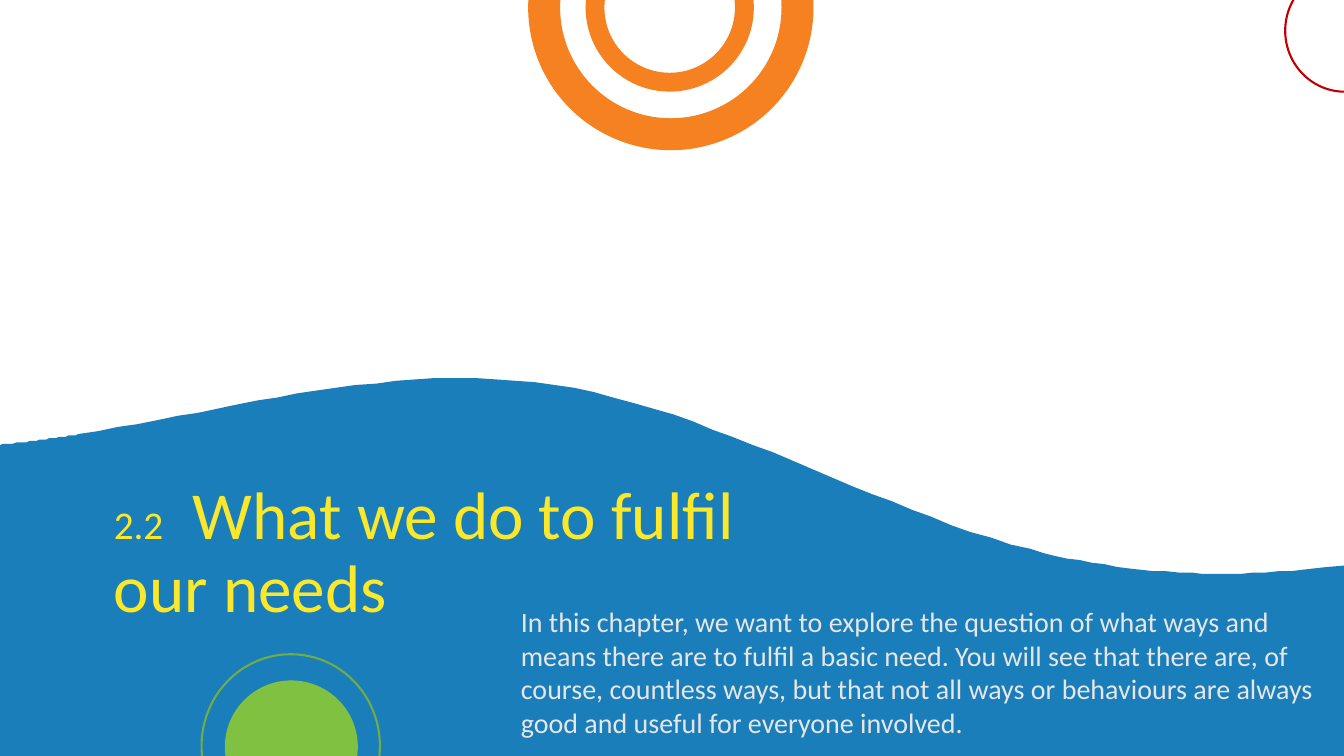
from lxml import etree
from pptx import Presentation
from pptx.dml.color import RGBColor
from pptx.enum.shapes import MSO_SHAPE
from pptx.enum.text import MSO_ANCHOR, PP_ALIGN
from pptx.oxml.ns import qn
from pptx.util import Pt

OVAL = MSO_SHAPE.OVAL
DONUT = MSO_SHAPE.DONUT
TOP = MSO_ANCHOR.TOP
LEFT = PP_ALIGN.LEFT

WIDE, HIGH = 960, 540
FONT = "Calibri"
STEPS = 24
COLORS = {
    "blue": "1A7EBA",
    "orange": "F68121",
    "lime": "80C141",
    "green": "70AD47",
    "red": "C00000",
    "yellow": "FBE82A",
    "pale": "E7E6E6",
}

CREST = (0, 317.5)
CURVES = [
    ((18.7, 315.8), (37.3, 313.2), (56, 310.3)),
    ((169.2, 292.3), (283, 257), (396, 275)),
    ((509, 292.3), (622.8, 362.9), (735.8, 392.4)),
    ((806.4, 411.1), (877, 413.3), (948.2, 405.4)),
]
SHORE = (WIDE, 403.9)

RINGS = [
    (DONUT, (377.3, -96.5, 203.8, 203.8), "orange", None),
    (DONUT, (418.3, -54.7, 120.2, 120.2), "orange", None),
    (OVAL, (160.6, 486, 95, 95), "lime", None),
    (OVAL, (144, 467.3, 127.4, 131), None, "green"),
    (OVAL, (918, -21.6, 85, 87.1), None, "red"),
]
BAND = 0.112

TITLE = [("2.2", 28), ("\tWhat we do to fulfil our needs", 48)]
STOP = 56.5
INTRO = [(
    "In this chapter, we want to explore the question of what ways and means "
    "there are to fulfil a basic need. You will see that there are, of course, "
    "countless ways, but that not all ways or behaviours are always good and "
    "useful for everyone involved.", 20)]


def color(name):
    return RGBColor.from_string(COLORS[name])


def paint(shape, fill, line):
    shape.shadow.inherit = False
    if fill:
        shape.fill.solid()
        shape.fill.fore_color.rgb = color(fill)
    else:
        shape.fill.background()
    if line:
        shape.line.color.rgb = color(line)
        shape.line.width = Pt(1.5)
    else:
        shape.line.fill.background()


def trace(start, curve):
    nodes = (start, *curve)
    points = []
    for step in range(1, STEPS + 1):
        t = step / STEPS
        u = 1 - t
        parts = (u ** 3, 3 * u * u * t, 3 * u * t * t, t ** 3)
        points.append(tuple(sum(w * n[axis] for w, n in zip(parts, nodes))
                            for axis in (0, 1)))
    return points


def add_wave(slide):
    points = [(0, HIGH), CREST]
    for curve in CURVES:
        points += trace(points[-1], curve)
    points.append(SHORE)
    form = slide.shapes.build_freeform(WIDE, HIGH, scale=Pt(1))
    form.add_line_segments(points, close=True)
    paint(form.convert_to_shape(), "blue", None)


def add_ring(slide, kind, area, fill, line):
    ring = slide.shapes.add_shape(kind, *map(Pt, area))
    if kind == DONUT:
        ring.adjustments[0] = BAND
    paint(ring, fill, line)


def add_text(slide, area, runs, ink, space=1.0, stop=None):
    frame = slide.shapes.add_textbox(*map(Pt, area)).text_frame
    frame.word_wrap = True
    frame.vertical_anchor = TOP
    para = frame.paragraphs[0]
    para.alignment = LEFT
    para.line_spacing = space
    if stop:
        tabs = etree.SubElement(para._p.get_or_add_pPr(), qn("a:tabLst"))
        etree.SubElement(tabs, qn("a:tab"), pos=str(Pt(stop)), algn="l")
    for words, size in runs:
        run = para.add_run()
        run.text = words
        run.font.name = FONT
        run.font.size = Pt(size)
        run.font.color.rgb = color(ink)


def main():
    deck = Presentation()
    deck.slide_width, deck.slide_height = Pt(WIDE), Pt(HIGH)
    slide = deck.slides.add_slide(deck.slide_layouts[6])
    add_wave(slide)
    add_text(slide, (74.2, 340.6, 490.3, 118), TITLE, "yellow", 0.9, STOP)
    for ring in RINGS:
        add_ring(slide, *ring)
    add_text(slide, (365, 428.4, 595, 104.4), INTRO, "pale")
    deck.save("out.pptx")


if __name__ == "__main__":
    main()
